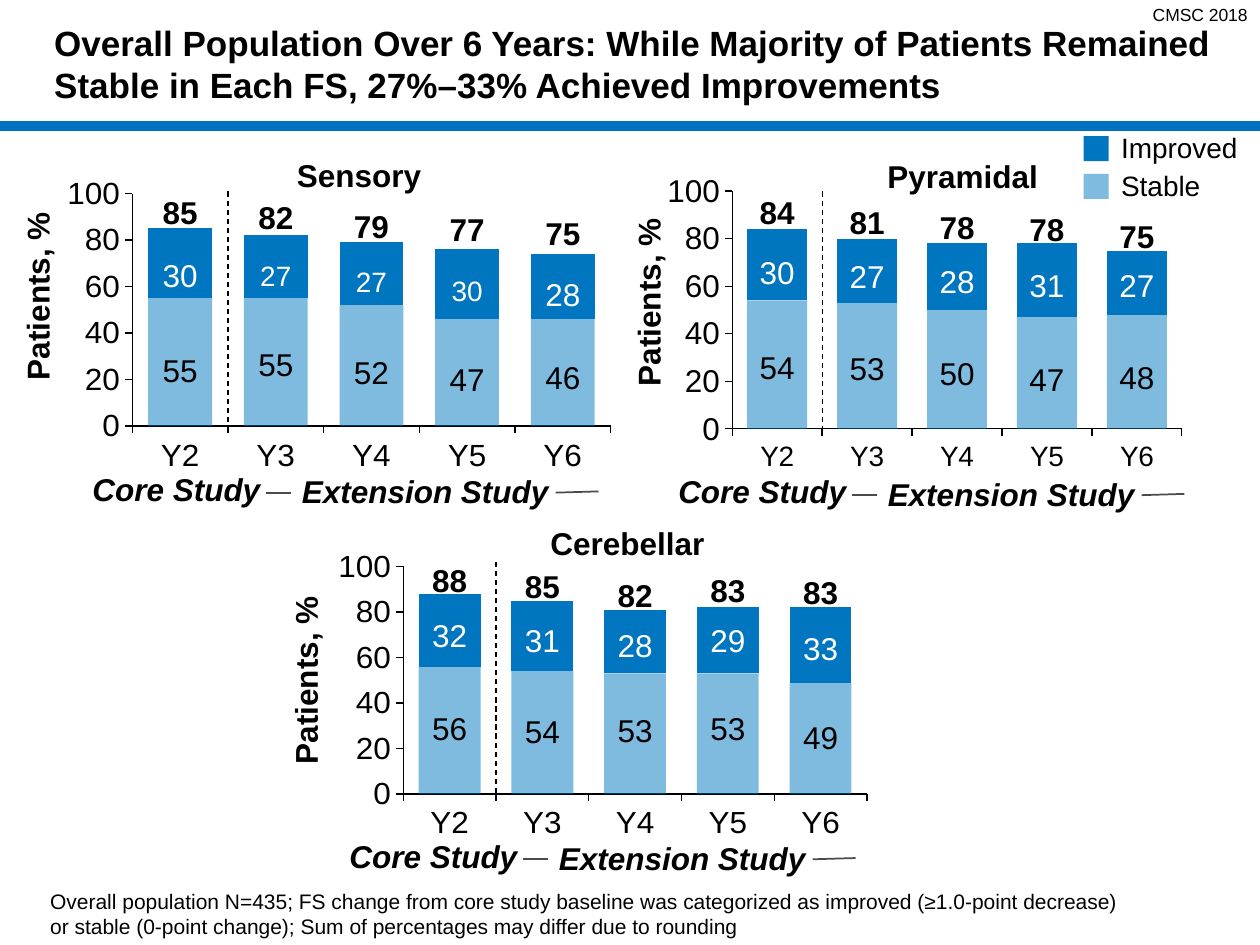
from dataclasses import dataclass

from lxml import etree
from pptx import Presentation
from pptx.chart.data import CategoryChartData
from pptx.dml.color import RGBColor
from pptx.enum.chart import XL_CHART_TYPE as ChartType, XL_TICK_MARK as TickMark
from pptx.enum.dml import MSO_LINE_DASH_STYLE as Dash
from pptx.enum.shapes import MSO_CONNECTOR as Connector, MSO_SHAPE as Shape
from pptx.enum.text import MSO_ANCHOR as Anchor, PP_ALIGN as Align
from pptx.oxml import parse_xml
from pptx.oxml.ns import nsdecls, qn
from pptx.util import Inches, Pt


@dataclass(frozen=True)
class Theme:
    """Colours, font and type sizes."""
    font: str = "Arial"
    black: RGBColor = RGBColor(0, 0, 0)
    white: RGBColor = RGBColor(255, 255, 255)
    rule: RGBColor = RGBColor(0x00, 0x70, 0xC0)
    bar: RGBColor = RGBColor(0x00, 0x76, 0xC0)
    grey: RGBColor = RGBColor(0x4B, 0x4B, 0x4D)
    title: int = 20
    label: int = 18
    small: int = 16
    note: int = 12
    tag: int = 10


@dataclass(frozen=True)
class Panel:
    """One chart; boxes are in inches and offsets are from the chart corner."""
    title: str
    box: tuple
    plot: tuple
    title_offset: tuple
    axis_offset: tuple
    study_offset: tuple
    dash_top: float
    stable: tuple
    improved: tuple
    stable_labels: tuple
    totals: tuple
    stable_tops: tuple
    improved_tops: tuple
    total_tops: tuple
    improved_sizes: tuple = (18,) * 5
    category_size: int = 18


THEME = Theme()
YEARS = ("Y2", "Y3", "Y4", "Y5", "Y6")
PANELS = (
    Panel("Cerebellar", (2.53, 4.36, 4.83, 2.31), (0.139, 0.052, 0.762, 0.809),
          (2.45, -0.25), (-0.1, 1.04), (-0.22, 2.23), 4.46,
          (56, 54, 53, 53, 49), (32, 31, 28, 29, 33),
          (56, 54, 53, 53, 49), (88, 85, 82, 83, 83),
          (5.58, 5.6, 5.59, 5.58, 5.65), (4.84, 4.88, 4.92, 4.88, 4.94),
          (4.4, 4.45, 4.52, 4.48, 4.5)),
    Panel("Sensory", (0.33, 1.4, 5.18, 2.35), (0.139, 0.052, 0.733, 0.809),
          (2.52, -0.21), (-0.03, 0.95), (-0.06, 2.28), 1.52,
          (55, 55, 52, 46, 46), (30, 27, 27, 30, 28),
          (55, 55, 52, 47, 46), (85, 82, 79, 77, 75),
          (2.74, 2.69, 2.75, 2.81, 2.79), (1.98, 2, 2.05, 2.12, 2.13),
          (1.48, 1.52, 1.59, 1.62, 1.65), improved_sizes=(18, 16, 16, 16, 18)),
    Panel("Pyramidal", (5.14, 1.34, 4.83, 2.42), (0.139, 0.073, 0.739, 0.78),
          (2.5, -0.14), (0.01, 1.06), (-0.22, 2.36), 1.52,
          (54, 53, 50, 47, 48), (30, 27, 28, 31, 27),
          (54, 53, 50, 47, 48), (84, 81, 78, 78, 75),
          (2.71, 2.72, 2.76, 2.81, 2.79), (1.96, 1.99, 2.03, 2.06, 2.06),
          (1.48, 1.56, 1.6, 1.62, 1.67), category_size=16),
)


def format_font(font, size, color=THEME.black, bold=False, italic=False):
    """Apply the theme font with the given look."""
    font.name, font.size, font.color.rgb = THEME.font, Pt(size), color
    font.bold, font.italic = bold, italic


def add_text(slide, text, left, top, width, height=0.4, size=THEME.label,
             align=Align.CENTER, **look):
    """Add a wrapping one-paragraph text box."""
    shape = slide.shapes.add_textbox(*map(Inches, (left, top, width, height)))
    shape.text_frame.word_wrap = True
    paragraph = shape.text_frame.paragraphs[0]
    paragraph.text, paragraph.alignment = text, align
    format_font(paragraph.font, size, **look)
    return shape


def add_line(slide, start, end, color, width, dash=None):
    """Add a straight line without a shadow."""
    line = slide.shapes.add_connector(Connector.STRAIGHT, *map(Inches, start + end))
    line.line.color.rgb, line.line.width = color, Pt(width)
    if dash:
        line.line.dash_style = dash
    etree.SubElement(line._element.spPr, qn("a:effectLst"))


def fill_bar(fill, transparent):
    """Fill with the bar colour, at half strength when transparent."""
    fill.solid()
    fill.fore_color.rgb = THEME.bar
    if transparent:
        color = fill._xPr.find(qn("a:solidFill"))[0]
        etree.SubElement(color, qn("a:alpha"), val="50000")


def set_plot_layout(chart, plot):
    """Fix the inner plot area at the given fractions of the chart."""
    area = chart._chartSpace.chart.plotArea
    for layout in area.findall(qn("c:layout")):
        area.remove(layout)
    values = "".join(f'<c:{tag} val="{value}"/>' for tag, value in zip("xywh", plot))
    area.insert(0, parse_xml(
        f'<c:layout {nsdecls("c")}><c:manualLayout><c:layoutTarget val="inner"/>'
        f'<c:xMode val="edge"/><c:yMode val="edge"/>{values}'
        '</c:manualLayout></c:layout>'))


def add_bars(slide, panel):
    """Add the stacked column chart of a panel."""
    data = CategoryChartData()
    data.categories = YEARS
    data.add_series("Stable", panel.stable)
    data.add_series("Improved", panel.improved)
    chart = slide.shapes.add_chart(
        ChartType.COLUMN_STACKED, *map(Inches, panel.box), data).chart
    chart.has_title = chart.has_legend = False
    format_font(chart.font, THEME.label)
    bars = chart.plots[0]
    bars.gap_width, bars.overlap, bars.vary_by_categories = 50, 100, False
    for series, transparent in zip(bars.series, (True, False)):
        fill_bar(series.format.fill, transparent)
    for axis, size in ((chart.category_axis, panel.category_size),
                       (chart.value_axis, THEME.label)):
        axis.has_major_gridlines = False
        axis.major_tick_mark, axis.minor_tick_mark = TickMark.OUTSIDE, TickMark.NONE
        axis.format.line.color.rgb, axis.format.line.width = THEME.black, Pt(0.75)
        format_font(axis.tick_labels.font, size)
    values = chart.value_axis
    values.minimum_scale, values.maximum_scale, values.major_unit = 0, 100, 20
    values.tick_labels.number_format = "0"
    values.tick_labels.number_format_is_linked = False
    set_plot_layout(chart, panel.plot)


def add_study_caption(slide, left, top):
    """Add the study phases below a chart."""
    look = dict(bold=True, italic=True)
    add_text(slide, "Core Study", left, top, 2.26, **look)
    add_text(slide, "Extension Study", left + 1.92, top + 0.02, 2.37, **look)
    for start, end, rise in ((1.84, 2.04, 0), (4.14, 4.48, 0.01)):
        add_line(slide, (left + start, top + 0.23), (left + end, top + 0.23 - rise),
                 THEME.grey, 1)


def add_panel(slide, panel):
    """Add a chart with its title, labels, divider and caption."""
    add_bars(slide, panel)
    left, top, width, _ = panel.box
    plot_left, step = left + panel.plot[0] * width, panel.plot[2] * width / len(YEARS)
    normal = (THEME.label,) * len(YEARS)
    rows = (
        (panel.stable_labels, panel.stable_tops, normal, {}),
        (panel.improved, panel.improved_tops, panel.improved_sizes,
         dict(color=THEME.white)),
        (panel.totals, panel.total_tops, normal, dict(bold=True)),
    )
    for numbers, tops, sizes, look in rows:
        for index, (number, label_top, size) in enumerate(zip(numbers, tops, sizes)):
            center = plot_left + (index + 0.5) * step
            add_text(slide, str(number), center - 0.35, label_top, 0.7, size=size, **look)
    across, down = panel.title_offset
    add_text(slide, panel.title, left + across - 0.9, top + down, 1.8, bold=True)
    across, down = panel.axis_offset
    axis_title = add_text(slide, "Patients, %", left + across - 1.07,
                          top + down - 0.2, 2.13, bold=True)
    axis_title.rotation = 270
    divider = plot_left + step
    add_line(slide, (divider, panel.dash_top), (divider, panel.dash_top + 1.9),
             THEME.black, 0.75, Dash.DASH)
    across, down = panel.study_offset
    add_study_caption(slide, left + across, top + down)


def add_header(slide):
    """Format the title and add the rule and the meeting tag."""
    add_line(slide, (0, 1), (10, 1), THEME.rule, 5.75)
    title = slide.shapes.title
    title.left, title.top, title.width, title.height = map(Inches, (0.33, 0, 9.39, 1))
    title.text_frame.vertical_anchor = Anchor.MIDDLE
    paragraph = title.text_frame.paragraphs[0]
    paragraph.text = ("Overall Population Over 6 Years: While Majority of Patients "
                      "Remained Stable in Each FS, 27%–33% Achieved Improvements")
    paragraph.alignment = Align.LEFT
    format_font(paragraph.font, THEME.title, bold=True)
    add_text(slide, "CMSC 2018", 8.12, -0.02, 1.88, 0.27, THEME.tag, Align.RIGHT)


def add_legend(slide, left, top):
    """Add the colour key."""
    for index, name in enumerate(("Improved", "Stable")):
        key_top = top + index * 0.3
        key = slide.shapes.add_shape(
            Shape.RECTANGLE, *map(Inches, (left, key_top, 0.2, 0.2)))
        key.shadow.inherit = False
        key.line.fill.background()
        fill_bar(key.fill, name == "Stable")
        add_text(slide, name, left + 0.2, key_top - 0.09, 1.2, 0.37,
                 THEME.small, Align.LEFT)


def main():
    """Build and save the slide."""
    presentation = Presentation()
    presentation.slide_width, presentation.slide_height = Inches(10), Inches(7.5)
    slide = presentation.slides.add_slide(presentation.slide_layouts[5])
    add_header(slide)
    for panel in PANELS:
        add_panel(slide, panel)
    add_legend(slide, 8.6, 1.08)
    add_text(slide, "Overall population N=435; FS change from core study baseline was "
             "categorized as improved (≥1.0-point decrease) or stable (0-point change); "
             "Sum of percentages may differ due to rounding",
             0.3, 7, 8.84, 0.5, THEME.note, Align.LEFT)
    presentation.save("out.pptx")


if __name__ == "__main__":
    main()
